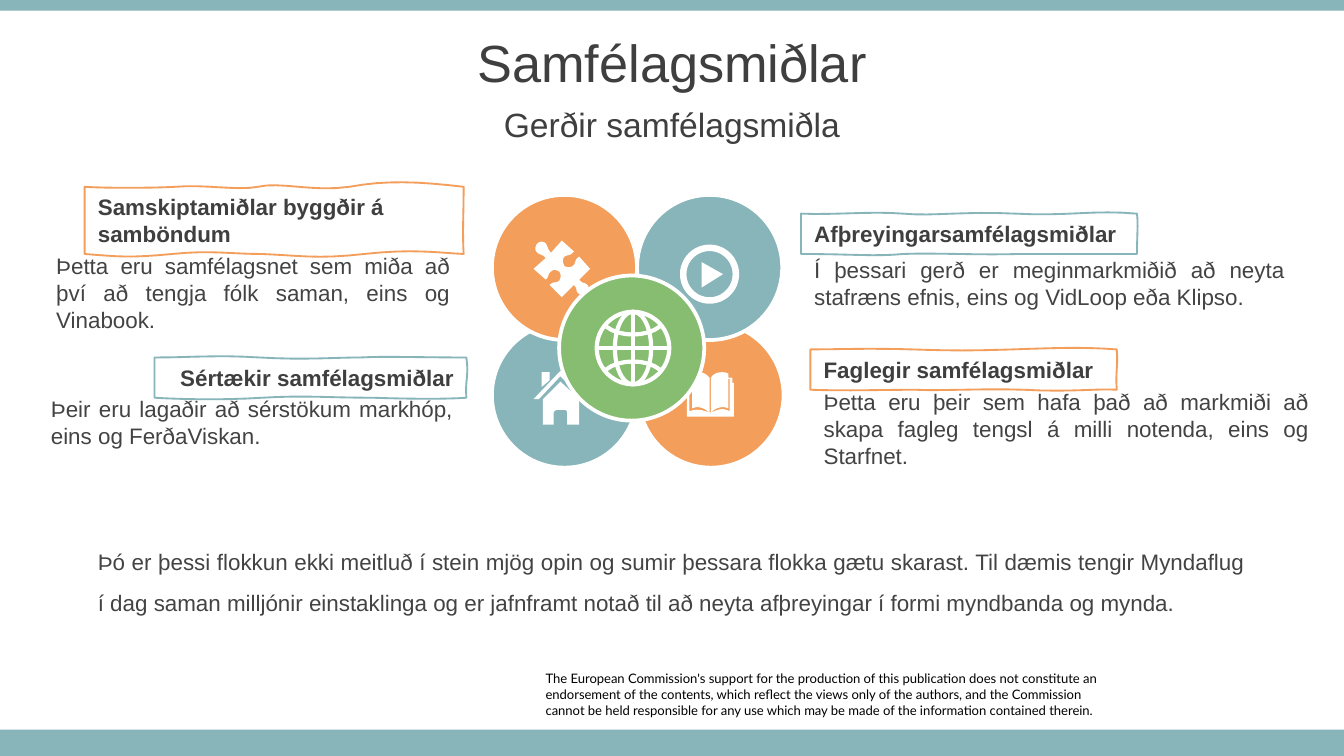
from dataclasses import dataclass

from lxml.etree import SubElement
from pptx import Presentation
from pptx.dml.color import RGBColor
from pptx.enum.shapes import MSO_CONNECTOR, MSO_SHAPE
from pptx.enum.text import MSO_ANCHOR, PP_ALIGN
from pptx.oxml.ns import qn
from pptx.util import Inches, Pt


@dataclass(frozen=True)
class Theme:
    """Colours, fonts and type sizes of the slide."""

    teal: str = "87B5BA"
    orange: str = "F39E5A"
    green: str = "86BD70"
    white: str = "FFFFFF"
    black: str = "000000"
    dark: str = "3F3F3F"
    gray: str = "434343"
    font: str = "Arial"
    small: str = "Lato"
    title: int = 28
    lead: int = 18
    body: int = 12
    note: int = 7


THEME = Theme()

HOUSE = [
    [(4.17, 2.84), (4.31, 2.97), (4.31, 3.16), (4.22, 3.16), (4.22, 3.07),
     (4.22, 3.06, 4.21, 3.05, 4.2, 3.05), (4.15, 3.05),
     (4.14, 3.05, 4.12, 3.06, 4.12, 3.07), (4.12, 3.16), (4.04, 3.16), (4.04, 2.97)],
    [(4.03, 2.77), (4.09, 2.77), (4.09, 2.83), (4.03, 2.88)],
    [(4.17, 2.76), (4.38, 2.97), (4.34, 2.97), (4.17, 2.8), (4.01, 2.97), (3.97, 2.97)],
]
BOOK = [[
    (5.29, 3.07), (5.28, 3.07), (5.22, 3.05, 5.19, 3.04, 5.13, 3.06), (5.13, 2.82),
    (5.15, 2.82), (5.15, 3.04), (5.19, 3.02, 5.23, 3.03, 5.28, 3.07), (5.28, 2.81),
    (5.25, 2.78, 5.23, 2.77, 5.2, 2.77), (5.18, 2.77, 5.17, 2.77, 5.15, 2.78),
    (5.15, 2.81), (5.12, 2.81), (5.12, 2.85), (5.11, 2.85), (5.11, 3.1), (5.46, 3.1),
    (5.46, 2.85), (5.45, 2.85), (5.45, 2.81), (5.42, 2.81), (5.42, 2.78),
    (5.4, 2.77, 5.38, 2.77, 5.37, 2.77), (5.34, 2.77, 5.31, 2.78, 5.29, 2.81),
    (5.29, 3.07), (5.33, 3.03, 5.38, 3.02, 5.42, 3.04), (5.42, 2.82), (5.43, 2.82),
    (5.43, 3.06), (5.37, 3.03, 5.34, 3.05, 5.29, 3.07),
]]
PUZZLE = [[
    (4, 1.81), (3.98, 1.83, 3.98, 1.86, 3.99, 1.87), (4.01, 1.9, 4.04, 1.89, 4.06, 1.92),
    (3.97, 2), (4.06, 2.08), (4.09, 2.06, 4.07, 2.04, 4.1, 2.02),
    (4.12, 2, 4.14, 2.01, 4.16, 2.02), (4.17, 2.03, 4.18, 2.06, 4.16, 2.09),
    (4.13, 2.11, 4.12, 2.09, 4.09, 2.12), (4.18, 2.21), (4.27, 2.12),
    (4.3, 2.15, 4.28, 2.16, 4.3, 2.18), (4.32, 2.2, 4.35, 2.2, 4.37, 2.18),
    (4.38, 2.17, 4.39, 2.14, 4.37, 2.12), (4.35, 2.1, 4.33, 2.11, 4.31, 2.08),
    (4.39, 2), (4.31, 1.91), (4.27, 1.93, 4.29, 1.96, 4.26, 1.98),
    (4.24, 1.99, 4.22, 1.99, 4.2, 1.98), (4.19, 1.96, 4.18, 1.93, 4.2, 1.91),
    (4.23, 1.89, 4.24, 1.91, 4.27, 1.87), (4.18, 1.79), (4.1, 1.88),
    (4.07, 1.85, 4.08, 1.84, 4.06, 1.81), (4.04, 1.79, 4.01, 1.8, 4, 1.81),
]]
TYPES = [
    ("Samskiptamiðlar byggðir á samböndum", THEME.orange, PP_ALIGN.LEFT, 1.39,
     [(0.63, 1.39), (0.79, 1.4, 1.1, 1.4, 1.31, 1.39), (1.51, 1.37, 1.77, 1.42, 1.92, 1.39),
      (2.08, 1.35, 2.33, 1.43, 2.6, 1.39), (2.87, 1.34, 3.11, 1.35, 3.45, 1.39),
      (3.45, 1.59, 3.44, 1.73, 3.45, 1.89), (3.25, 1.88, 3.07, 1.85, 2.71, 1.89),
      (2.36, 1.93, 2.21, 1.9, 1.95, 1.89), (1.69, 1.89, 1.59, 1.86, 1.28, 1.89),
      (0.97, 1.92, 0.89, 1.91, 0.63, 1.89)],
     "Þetta eru samfélagsnet sem miða að því að tengja fólk saman, eins og Vinabook.",
     (0.32, 1.83, 3.13, 0.7)),
    ("Afþreyingarsamfélagsmiðlar", THEME.teal, PP_ALIGN.LEFT, 1.59,
     [(5.96, 1.59), (6.24, 1.6, 6.48, 1.57, 6.72, 1.59), (6.96, 1.61, 7.17, 1.57, 7.56, 1.59),
      (7.94, 1.61, 8.15, 1.56, 8.46, 1.59), (8.47, 1.67, 8.46, 1.75, 8.46, 1.89),
      (8.18, 1.89, 7.84, 1.89, 7.58, 1.89), (7.33, 1.9, 6.94, 1.88, 6.72, 1.89),
      (6.51, 1.91, 6.34, 1.89, 5.96, 1.89)],
     "Í þessari gerð er meginmarkmiðið að neyta stafræns efnis, eins og VidLoop eða Klipso.",
     (5.96, 1.86, 3.7, 0.5)),
    ("Faglegir samfélagsmiðlar", THEME.orange, PP_ALIGN.LEFT, 2.6,
     [(6.03, 2.6), (6.2, 2.6, 6.48, 2.59, 6.79, 2.6), (7.1, 2.61, 7.21, 2.61, 7.53, 2.6),
      (7.85, 2.59, 8.04, 2.58, 8.31, 2.6), (8.32, 2.74, 8.3, 2.76, 8.31, 2.9),
      (8.16, 2.89, 7.96, 2.92, 7.62, 2.9), (7.28, 2.89, 6.99, 2.91, 6.81, 2.9),
      (6.63, 2.9, 6.26, 2.91, 6.03, 2.9)],
     "Þetta eru þeir sem hafa það að markmiði að skapa fagleg tengsl á milli notenda, "
     "eins og Starfnet.", (6.03, 2.84, 3.81, 0.71)),
    ("Sértækir samfélagsmiðlar", THEME.teal, PP_ALIGN.RIGHT, 2.66,
     [(1.15, 2.66), (1.44, 2.66, 1.59, 2.64, 1.93, 2.66), (2.26, 2.68, 2.49, 2.66, 2.68, 2.66),
      (2.86, 2.65, 3.1, 2.66, 3.47, 2.66), (3.49, 2.8, 3.46, 2.82, 3.47, 2.96),
      (3.31, 2.97, 3.11, 2.97, 2.77, 2.96), (2.43, 2.96, 2.27, 2.94, 1.95, 2.96),
      (1.62, 2.98, 1.33, 2.97, 1.15, 2.96)],
     "Þeir eru lagaðir að sérstökum markhóp, eins og FerðaViskan.",
     (0.28, 2.89, 3.19, 0.5)),
]


def paint(shape, fill=None, line=None, width=1):
    """Set the fill and line of a shape and drop its shadow."""
    shape.shadow.inherit = False
    for part, tone in ((shape.fill, fill), (shape.line.fill, line)):
        if tone:
            part.solid()
            part.fore_color.rgb = RGBColor.from_string(tone)
        else:
            part.background()
    if line:
        shape.line.width = Pt(width)


def write(frame, lines, size, tone, align=PP_ALIGN.LEFT, font=THEME.font, bold=False,
          space=None, anchor=MSO_ANCHOR.TOP):
    """Write each line as a paragraph with one run."""
    frame.word_wrap = True
    frame.vertical_anchor = anchor
    for i, words in enumerate(lines):
        para = frame.add_paragraph() if i else frame.paragraphs[0]
        para.alignment = align
        if space:
            para.line_spacing = space
        run = para.add_run()
        run.text = words
        run.font.name, run.font.size, run.font.bold = font, Pt(size), bold
        run.font.color.rgb = RGBColor.from_string(tone)


def add_text(slide, box, lines, size, tone, **style):
    """Add a text box and return its frame."""
    frame = slide.shapes.add_textbox(*map(Inches, box)).text_frame
    write(frame, lines, size, tone, **style)
    return frame


def add_form(slide, kind, box, **look):
    """Add a painted preset shape."""
    shape = slide.shapes.add_shape(kind, *map(Inches, box))
    paint(shape, **look)
    return shape


def flatten(path, steps=8):
    """Turn a path of lines and cubic curves into points."""
    points = [path[0]]
    for step in path[1:]:
        if len(step) == 2:
            points.append(step)
            continue
        knots = [points[-1], step[:2], step[2:4], step[4:]]
        for n in range(1, steps + 1):
            t = n / steps
            parts = ((1 - t) ** 3, 3 * t * (1 - t) ** 2, 3 * t * t * (1 - t), t ** 3)
            points.append(tuple(sum(w * k[axis] for w, k in zip(parts, knots))
                                for axis in (0, 1)))
    return [(Inches(x), Inches(y)) for x, y in points]


def add_path(slide, paths, close=True, **look):
    """Add a painted outline made of one or more paths."""
    first, *rest = map(flatten, paths)
    pen = slide.shapes.build_freeform(*first[0], scale=1.0)
    pen.add_line_segments(first[1:], close=close)
    for points in rest:
        pen.move_to(*points[0])
        pen.add_line_segments(points[1:], close=close)
    shape = pen.convert_to_shape()
    paint(shape, **look)
    return shape


def add_type(slide, name, tone, align, top, path, words, box):
    """Add a wavy name box and the text that belongs to it."""
    add_text(slide, box, [words], THEME.body, THEME.gray, align=PP_ALIGN.JUSTIFY)
    shape = add_path(slide, [path], line=tone)
    shape.text_frame.margin_top = Inches(top + 0.05) - shape.top
    write(shape.text_frame, [name], THEME.body, THEME.dark, align=align, bold=True)


def add_globe(slide, x, y, r):
    """Draw a line globe around a centre."""
    look = {"line": THEME.white, "width": 2.25}
    for half in (r, r / 2):
        add_form(slide, MSO_SHAPE.OVAL, (x - half, y - r, 2 * half, 2 * r), **look)
    for dx, dy in ((r, 0), (0, r)):
        ends = map(Inches, (x - dx, y - dy, x + dx, y + dy))
        line = slide.shapes.add_connector(MSO_CONNECTOR.STRAIGHT, *ends)
        line.line.color.rgb = RGBColor.from_string(THEME.white)
        line.line.width = Pt(2.25)
        SubElement(line._element.spPr, qn("a:effectLst"))
    for side in (-1, 1):
        far, near = y + side * 0.16, y + side * 0.08
        add_path(slide, [[(x - 0.2, far), (x - 0.1, near, x + 0.1, near, x + 0.2, far)]],
                 close=False, **look)


def add_disc(slide, x, y, tone):
    """Add a round disc with a white rim."""
    add_form(slide, MSO_SHAPE.OVAL, (x, y, 1.08, 1.08), fill=tone, line=THEME.white, width=2)


def main():
    """Build the slide and save it."""
    deck = Presentation()
    deck.slide_width = Inches(10)
    deck.slide_height = deck.slide_width * 9 // 16
    slide = deck.slides.add_slide(deck.slide_layouts[6])
    note = add_text(slide, (4.06, 4.99, 4.17, 0.35), [
        "The European Commission's support for the production of this publication does not "
        "constitute an endorsement of the contents, which reflect the views only of the "
        "authors, and the Commission",
        "cannot be held responsible for any use which may be made of the information "
        "contained therein."], THEME.note, THEME.black, font=THEME.small)
    note.margin_left = note.margin_right = note.margin_top = note.margin_bottom = 0
    for top, high in ((5.43, 0.2), (0, 0.08)):
        add_form(slide, MSO_SHAPE.RECTANGLE, (0, top, 10, high), fill=THEME.teal)
    for box, words, size in (((0, 0.14, 10, 0.63), "Samfélagsmiðlar", THEME.title),
                             ((0, 0.77, 10, 0.31), "Gerðir samfélagsmiðla", THEME.lead)):
        add_text(slide, box, [words], size, THEME.dark, align=PP_ALIGN.CENTER,
                 anchor=MSO_ANCHOR.MIDDLE)
    for x, y, tone in ((4.75, 2.4, THEME.orange), (4.74, 1.45, THEME.teal),
                       (3.66, 2.4, THEME.teal), (3.66, 1.45, THEME.orange)):
        add_disc(slide, x, y, tone)
    for icon in (BOOK, PUZZLE, HOUSE, [[(5.22, 1.95), (5.38, 2.04), (5.22, 2.14)]]):
        add_path(slide, icon, fill=THEME.white)
    ring = add_form(slide, MSO_SHAPE.DONUT, (5.06, 1.82, 0.44, 0.44), fill=THEME.white)
    ring.adjustments[0] = 0.11
    for item in TYPES:
        add_type(slide, *item)
    add_text(slide, (0.63, 3.79, 8.74, 0.98), [
        "Þó er þessi flokkun ekki meitluð í stein mjög opin og sumir þessara flokka gætu "
        "skarast. Til dæmis tengir Myndaflug í dag saman milljónir einstaklinga og er "
        "jafnframt notað til að neyta afþreyingar í formi myndbanda og mynda."],
        THEME.body, THEME.gray, align=PP_ALIGN.JUSTIFY, space=1.5, anchor=MSO_ANCHOR.MIDDLE)
    add_disc(slide, 4.16, 2.05, THEME.green)
    add_globe(slide, 4.71, 2.59, 0.27)
    deck.save("out.pptx")


if __name__ == "__main__":
    main()
